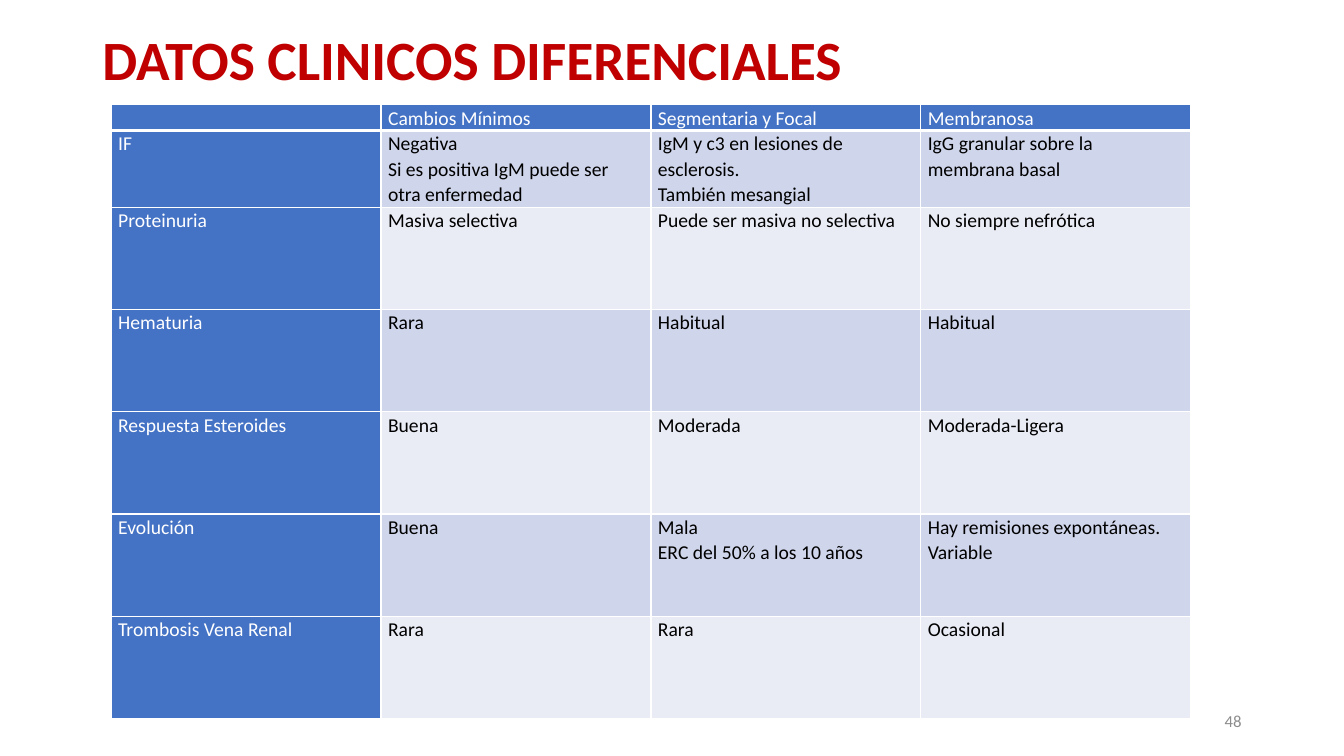
"""Build the slide comparing clinical data of three glomerular diseases."""
from dataclasses import dataclass

from lxml import etree
from pptx import Presentation
from pptx.dml.color import RGBColor
from pptx.enum.text import MSO_ANCHOR, MSO_AUTO_SIZE, PP_ALIGN
from pptx.oxml.ns import qn
from pptx.slide import Slide
from pptx.table import _Cell
from pptx.text.text import _Paragraph
from pptx.util import Pt

MIDDLE = MSO_ANCHOR.MIDDLE
NO_AUTOFIT = MSO_AUTO_SIZE.NONE
LEFT, RIGHT = PP_ALIGN.LEFT, PP_ALIGN.RIGHT

RED = RGBColor(0xC0, 0x00, 0x00)
BLUE = RGBColor(0x44, 0x72, 0xC4)
DARK_BAND = RGBColor(0xCF, 0xD5, 0xEA)
LIGHT_BAND = RGBColor(0xE9, 0xEB, 0xF5)
WHITE = RGBColor(0xFF, 0xFF, 0xFF)
BLACK = RGBColor(0x00, 0x00, 0x00)
GRAY = RGBColor(0x8C, 0x8C, 0x8C)

FONT = "Calibri"
CELL_SIZE = 14
COLUMN_WIDTH = 192.8


@dataclass(frozen=True)
class ClinicalRow:
    height: float
    cells: tuple[str, str, str, str]


CLINICAL_ROWS = (
    ClinicalRow(18.3, ("", "Cambios Mínimos", "Segmentaria y Focal", "Membranosa")),
    ClinicalRow(54.8, (
        "IF",
        "Negativa\nSi es positiva IgM puede ser otra enfermedad",
        "IgM y c3 en lesiones de esclerosis.\nTambién mesangial",
        "IgG granular sobre la membrana basal",
    )),
    ClinicalRow(73.1, (
        "Proteinuria", "Masiva selectiva",
        "Puede ser masiva no selectiva", "No siempre nefrótica",
    )),
    ClinicalRow(73.1, ("Hematuria", "Rara", "Habitual", "Habitual")),
    ClinicalRow(73.1, ("Respuesta Esteroides", "Buena", "Moderada", "Moderada-Ligera")),
    ClinicalRow(73.1, (
        "Evolución", "Buena",
        "Mala\nERC del 50% a los 10 años",
        "Hay remisiones expontáneas.\nVariable",
    )),
    ClinicalRow(73.1, ("Trombosis Vena Renal", "Rara", "Rara", "Ocasional")),
)


def format_paragraph(paragraph: _Paragraph, size: float, color: RGBColor, bold: bool = False) -> None:
    font = paragraph.font
    font.name, font.size, font.bold = FONT, Pt(size), bold
    font.color.rgb = color


def add_borders(cell: _Cell, bottom_width: float) -> None:
    properties = cell._tc.get_or_add_tcPr()
    for side, width in (("L", 1), ("R", 1), ("T", 1), ("B", bottom_width)):
        line = etree.SubElement(properties, qn(f"a:ln{side}"), w=str(Pt(width)))
        fill = etree.SubElement(line, qn("a:solidFill"))
        etree.SubElement(fill, qn("a:srgbClr"), val=str(WHITE))


def fill_cell(cell: _Cell, text: str, row: int, column: int) -> None:
    is_heading = row == 0 or column == 0
    add_borders(cell, 3 if row == 0 else 1)
    cell.fill.solid()
    cell.fill.fore_color.rgb = BLUE if is_heading else DARK_BAND if row % 2 else LIGHT_BAND
    cell.margin_left = cell.margin_right = Pt(5)
    cell.margin_top = cell.margin_bottom = Pt(0)
    cell.text = text
    for paragraph in cell.text_frame.paragraphs:
        paragraph.line_spacing = 1.07
        format_paragraph(paragraph, CELL_SIZE, WHITE if is_heading else BLACK)
        if not text:
            etree.SubElement(paragraph._p, qn("a:endParaRPr"), sz=str(CELL_SIZE * 100))


def add_clinical_table(slide: Slide) -> None:
    column_count = len(CLINICAL_ROWS[0].cells)
    table = slide.shapes.add_table(
        len(CLINICAL_ROWS), column_count, Pt(79.4), Pt(74.9),
        Pt(COLUMN_WIDTH * column_count), Pt(sum(row.height for row in CLINICAL_ROWS)),
    ).table
    table.horz_banding = False
    for column in table.columns:
        column.width = Pt(COLUMN_WIDTH)
    for row_index, row in enumerate(CLINICAL_ROWS):
        table.rows[row_index].height = Pt(row.height)
        for column_index, text in enumerate(row.cells):
            fill_cell(table.cell(row_index, column_index), text, row_index, column_index)


def add_title(slide: Slide) -> None:
    title = slide.shapes.title
    title.left, title.top, title.width, title.height = Pt(66), Pt(28.8), Pt(828), Pt(74.4)
    frame = title.text_frame
    frame.text = "DATOS CLINICOS DIFERENCIALES"
    frame.auto_size = NO_AUTOFIT
    frame.vertical_anchor = MIDDLE
    frame.margin_bottom = Pt(47)
    paragraph = frame.paragraphs[0]
    paragraph.alignment = LEFT
    paragraph.line_spacing = 0.9
    format_paragraph(paragraph, 39.6, RED, bold=True)


def add_page_number(slide: Slide) -> None:
    frame = slide.shapes.add_textbox(Pt(678), Pt(500.5), Pt(216), Pt(28.8)).text_frame
    frame.word_wrap = True
    frame.vertical_anchor = MIDDLE
    frame.text = "48"
    paragraph = frame.paragraphs[0]
    paragraph.alignment = RIGHT
    format_paragraph(paragraph, 12, GRAY)


def main() -> None:
    presentation = Presentation()
    presentation.slide_width, presentation.slide_height = Pt(960), Pt(540)
    slide = presentation.slides.add_slide(presentation.slide_layouts.get_by_name("Title Only"))
    add_title(slide)
    add_clinical_table(slide)
    add_page_number(slide)
    presentation.save("out.pptx")


if __name__ == "__main__":
    main()
